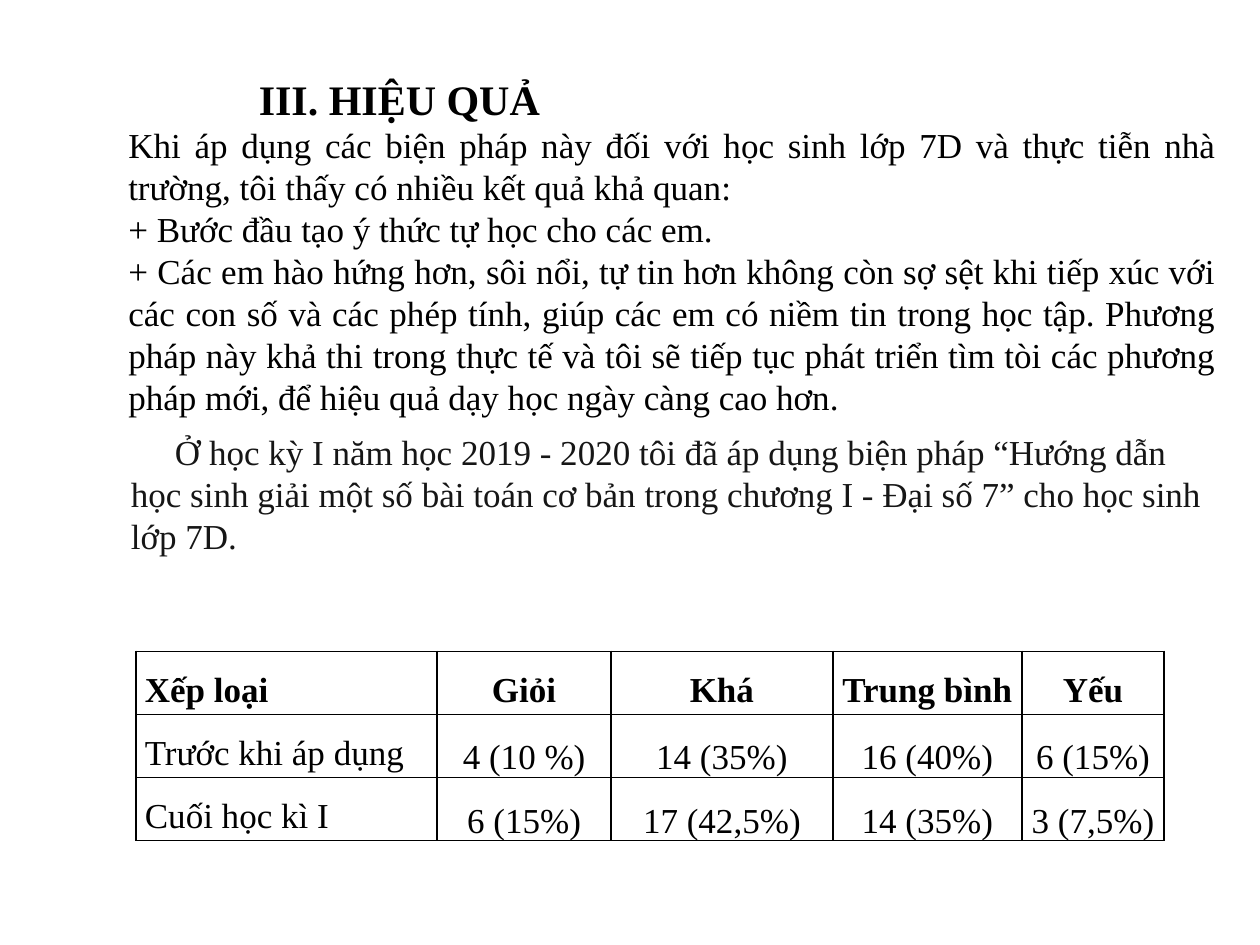
from lxml import etree
from pptx import Presentation
from pptx import util as u
from pptx.dml.color import RGBColor
from pptx.enum import text
from pptx.oxml import ns

FONT = "Times New Roman"
COLOURS = {"ink": "000000", "soft_ink": "161616"}
ALIGN = text.PP_ALIGN
ANCHOR = text.MSO_ANCHOR

EFFECTS = [
    "Khi áp dụng các biện pháp này đối với học sinh lớp 7D và thực tiễn nhà "
    "trường, tôi thấy có nhiều kết quả khả quan:",
    "+ Bước đầu tạo ý thức tự học cho các em.",
    "+ Các em hào hứng hơn, sôi nổi, tự tin hơn không còn sợ sệt khi tiếp xúc "
    "với các con số và các phép tính, giúp các em có niềm tin trong học tập. "
    "Phương pháp này khả thi trong thực tế và tôi sẽ tiếp tục phát triển tìm "
    "tòi các phương pháp mới, để hiệu quả dạy học ngày càng cao hơn.",
]
CONTEXT = (
    "Ở học kỳ I năm học 2019 - 2020 tôi đã áp dụng biện pháp “Hướng dẫn học "
    "sinh giải một số bài toán cơ bản trong chương I - Đại số 7” cho học sinh "
    "lớp 7D."
)
RESULTS = [
    ["Xếp loại", "Giỏi", "Khá", "Trung bình", "Yếu"],
    ["Trước khi áp dụng", "4 (10 %)", "14 (35%)", "16 (40%)", "6 (15%)"],
    ["Cuối học kì I", "6 (15%)", "17 (42,5%)", "14 (35%)", "3 (7,5%)"],
]
COLUMN_WIDTHS = [2.39, 1.38, 1.76, 1.5, 1.13]


def write(para, words, align, size=20, bold=False, colour="ink"):
    para.alignment = align
    span = para.add_run()
    span.text = words
    span.font.name = FONT
    span.font.size = u.Pt(size)
    span.font.bold = bold
    span.font.color.rgb = RGBColor.from_string(COLOURS[colour])


def add_text(page, area, lines, align, anchor=ANCHOR.TOP, indent=0, **style):
    """Add a wrapping text box with one paragraph for each line."""
    frame = page.shapes.add_textbox(*map(u.Inches, area)).text_frame
    frame.word_wrap = True
    frame.vertical_anchor = anchor
    for index, line in enumerate(lines):
        para = frame.add_paragraph() if index else frame.paragraphs[0]
        write(para, line, align, **style)
        if indent:
            para._p.get_or_add_pPr().set("indent", str(u.Inches(indent)))


def outline_cell(cell):
    properties = cell._tc.get_or_add_tcPr()
    for side in ("lnL", "lnR", "lnT", "lnB"):
        line = etree.SubElement(properties, ns.qn(f"a:{side}"), w=str(u.Pt(1)))
        fill = etree.SubElement(line, ns.qn("a:solidFill"))
        etree.SubElement(fill, ns.qn("a:srgbClr"), val=COLOURS["ink"])
    cell.fill.background()


def fill_cell(cell, words, row, column):
    cell.margin_left = cell.margin_right = u.Inches(0.07)
    cell.margin_top = cell.margin_bottom = 0
    is_header, is_label = row == 0, column == 0
    if is_label:
        align = ALIGN.LEFT if is_header else ALIGN.JUSTIFY
    else:
        align = ALIGN.CENTER
    cell.vertical_anchor = ANCHOR.TOP if is_header or is_label else ANCHOR.BOTTOM
    para = cell.text_frame.paragraphs[0]
    para.line_spacing = 1.5
    write(para, words, align, bold=is_header)
    outline_cell(cell)


def add_results(page, left, top, width, height):
    area = map(u.Inches, (left, top, width, height))
    table = page.shapes.add_table(len(RESULTS), len(COLUMN_WIDTHS), *area).table
    table.first_row = table.horz_banding = False
    for column, column_width in zip(table.columns, COLUMN_WIDTHS):
        column.width = u.Inches(column_width)
    for row, values in enumerate(RESULTS):
        for column, words in enumerate(values):
            fill_cell(table.cell(row, column), words, row, column)


def main():
    deck = Presentation()
    deck.slide_width, deck.slide_height = u.Inches(10), u.Inches(7.5)
    page = deck.slides.add_slide(deck.slide_layouts[6])
    add_text(page, (1.67, 0.39, 3, 0.79), ["III. HIỆU QUẢ"], ALIGN.CENTER,
             ANCHOR.MIDDLE, size=24, bold=True)
    add_text(page, (0.92, 0.92, 8.83, 2.46), EFFECTS, ALIGN.JUSTIFY, ANCHOR.MIDDLE)
    add_results(page, 1.08, 5.17, sum(COLUMN_WIDTHS), 1.5)
    add_text(page, (0.94, 3.37, 8.81, 1.11), [CONTEXT], ALIGN.LEFT,
             indent=0.35, colour="soft_ink")
    deck.save("out.pptx")


if __name__ == "__main__":
    main()
